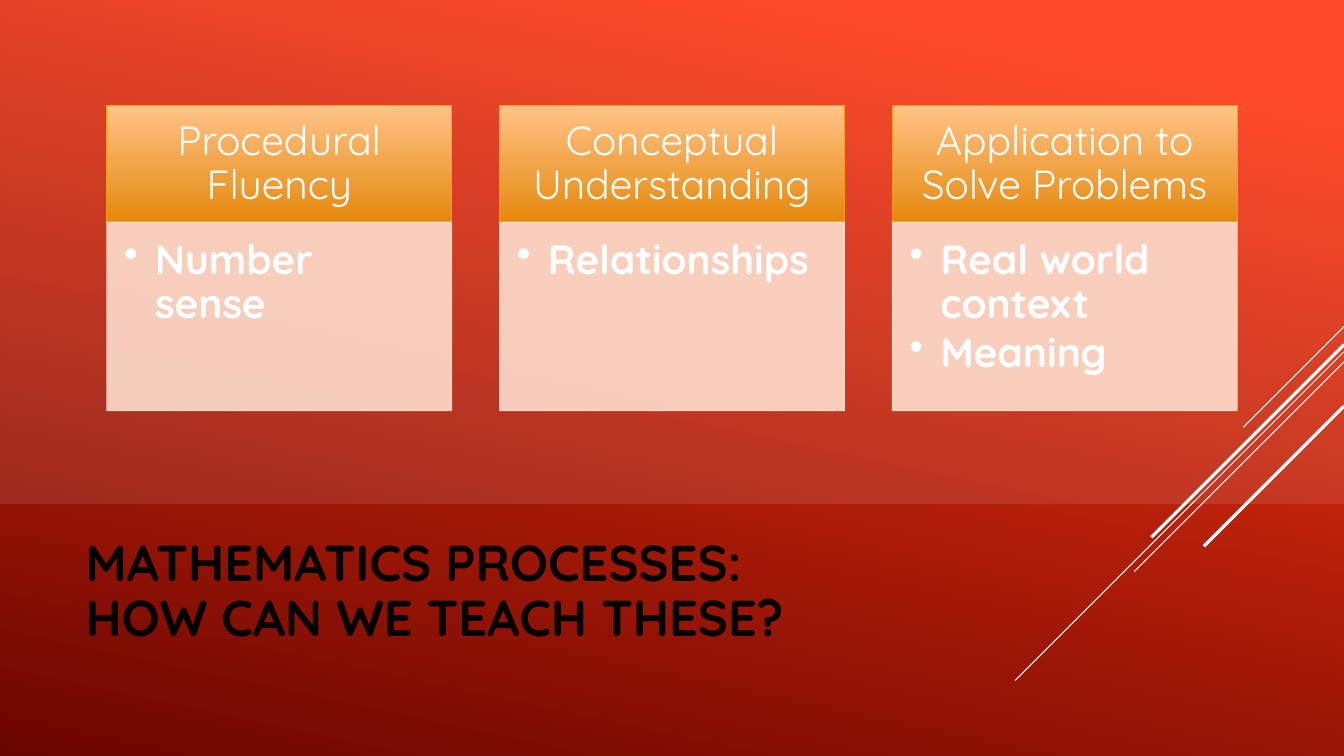
from lxml import etree
from pptx import Presentation
from pptx.dml.color import RGBColor
from pptx.enum.shapes import MSO_CONNECTOR, MSO_SHAPE
from pptx.enum.text import MSO_ANCHOR, PP_ALIGN
from pptx.oxml.ns import qn
from pptx.util import Inches, Pt

STRAIGHT = MSO_CONNECTOR.STRAIGHT
RECTANGLE = MSO_SHAPE.RECTANGLE
SNIPPED = MSO_SHAPE.SNIP_2_DIAG_RECTANGLE
TOP, MIDDLE = MSO_ANCHOR.TOP, MSO_ANCHOR.MIDDLE
LEFT, CENTER = PP_ALIGN.LEFT, PP_ALIGN.CENTER

WHITE = RGBColor(0xFF, 0xFF, 0xFF)
BLACK = RGBColor(0x00, 0x00, 0x00)
BRIGHT_RED = RGBColor(0xFF, 0x37, 0x12)
DARK_RED = RGBColor(0x6A, 0x06, 0x00)
LIGHT_ORANGE = RGBColor(0xFF, 0xC3, 0x86)
DEEP_ORANGE = RGBColor(0xE5, 0x88, 0x0C)
EDGE_ORANGE = RGBColor(0xFA, 0x9C, 0x1F)
PEACH = RGBColor(0xFD, 0xDE, 0xCD)

FONT = "Quicksand"
WIDTH, HEIGHT = 13.33, 7.5
BAND_HEIGHT = HEIGHT * 2 / 3

# Card grid
CARD_LEFT, CARD_TOP = 1.06, 1.05
CARD_WIDTH, CARD_STEP = 3.42, 3.895
HEADER_HEIGHT, BODY_HEIGHT = 1.155, 1.87
CARDS = [
    ("Procedural Fluency", ["Number sense"]),
    ("Conceptual Understanding", ["Relationships"]),
    ("Application to Solve Problems", ["Real world context", "Meaning"]),
]

# Diagonal lines: height at the right edge, run to the lower left, weight
DIAGONALS = [
    (3.24, 1.0, 0.75),
    (3.49, 3.26, 0.75),
    (3.59, 2.08, 0.75),
    (3.42, 1.91, 2.25),
    (4.03, 1.39, 2.25),
]


def set_alpha(color_parent, percent):
    color = color_parent.find(".//" + qn("a:srgbClr"))
    etree.SubElement(color, qn("a:alpha"), val=str(percent * 1000))


def write_text(shape, lines, size, color, bold, anchor, align, insets):
    frame = shape.text_frame
    frame.word_wrap = True
    frame.vertical_anchor = anchor
    (frame.margin_left, frame.margin_top,
     frame.margin_right, frame.margin_bottom) = [Inches(inset) for inset in insets]
    for index, line in enumerate(lines):
        paragraph = frame.add_paragraph() if index else frame.paragraphs[0]
        paragraph.alignment = align
        paragraph.line_spacing = 0.9
        run = paragraph.add_run()
        run.text = line
        run.font.name = FONT
        run.font.size = Pt(size)
        run.font.bold = bold
        run.font.color.rgb = color
    return frame.paragraphs


presentation = Presentation()
presentation.slide_width = Inches(WIDTH)
presentation.slide_height = Inches(HEIGHT)
slide = presentation.slides.add_slide(presentation.slide_layouts[6])
shapes = slide.shapes

# Background
background = slide.background.fill
background.gradient()
background.gradient_angle = 258
for stop, position, color in zip(background.gradient_stops, (0.1, 1), (BRIGHT_RED, DARK_RED)):
    stop.position = position
    stop.color.rgb = color

# Diagonal lines
for start, run_length, weight in DIAGONALS:
    diagonal = shapes.add_connector(
        STRAIGHT, Inches(WIDTH), Inches(start),
        Inches(WIDTH - run_length), Inches(start + run_length))
    diagonal.line.color.rgb = WHITE
    diagonal.line.width = Pt(weight)
    etree.SubElement(diagonal._element.spPr, qn("a:effectLst"))

# Title
title = shapes.add_textbox(Inches(0.75), Inches(5.25), Inches(10.14), Inches(1.26))
write_text(title, ["MATHEMATICS PROCESSES:", "HOW CAN WE TEACH THESE?"], 36, BLACK, True,
           MIDDLE, LEFT, (0.1, 0.05, 0.1, 0.05))

# Translucent upper band
band = shapes.add_shape(SNIPPED, 0, 0, Inches(WIDTH), Inches(BAND_HEIGHT))
band.adjustments[0] = band.adjustments[1] = 0
band.shadow.inherit = False
band.fill.solid()
band.fill.fore_color.rgb = WHITE
set_alpha(band._element.spPr, 10)
band.line.fill.background()

# Cards
for column, (heading, points) in enumerate(CARDS):
    left = Inches(CARD_LEFT + column * CARD_STEP)

    header = shapes.add_shape(RECTANGLE, left, Inches(CARD_TOP),
                              Inches(CARD_WIDTH), Inches(HEADER_HEIGHT))
    header.fill.gradient()
    header.fill.gradient_angle = 270
    for stop, position, color in zip(header.fill.gradient_stops, (0, 1),
                                     (LIGHT_ORANGE, DEEP_ORANGE)):
        stop.position = position
        stop.color.rgb = color
    header.line.color.rgb = EDGE_ORANGE
    write_text(header, [heading], 29, WHITE, False, MIDDLE, CENTER, (0.23, 0.13, 0.23, 0.13))

    body = shapes.add_shape(RECTANGLE, left, Inches(CARD_TOP + HEADER_HEIGHT),
                            Inches(CARD_WIDTH), Inches(BODY_HEIGHT))
    body.fill.solid()
    body.fill.fore_color.rgb = PEACH
    set_alpha(body._element.spPr, 90)
    body.line.color.rgb = PEACH
    set_alpha(body.line._ln, 90)
    bullets = write_text(body, points, 29, WHITE, True, TOP, LEFT, (0.17, 0.17, 0.23, 0.25))
    for paragraph in bullets:
        paragraph.space_after = Pt(4)
        properties = paragraph._p.get_or_add_pPr()
        properties.set("marL", str(Inches(0.31)))
        properties.set("indent", str(-Inches(0.31)))
        etree.SubElement(properties, qn("a:buChar"), char="•")

    for box in (header, body):
        box.shadow.inherit = False
        box.line.width = Pt(0.75)

presentation.save("out.pptx")
